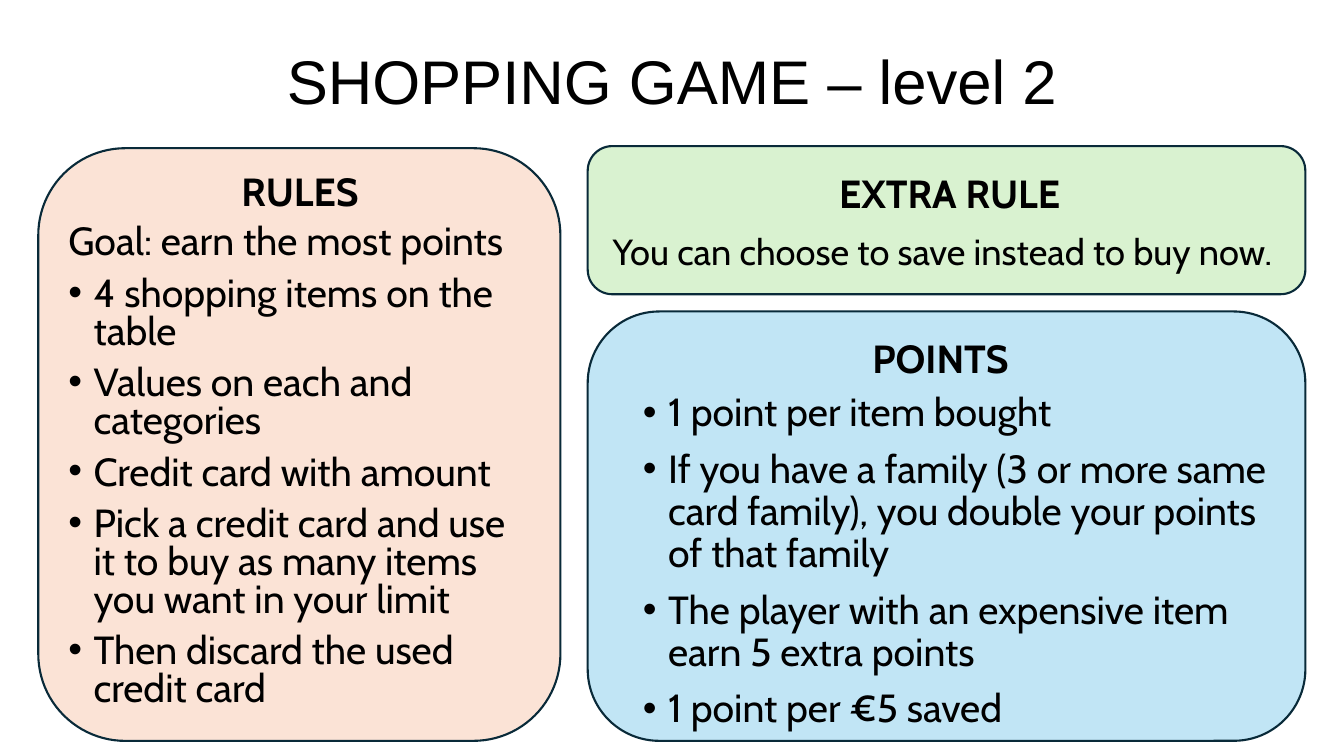
from dataclasses import dataclass

from lxml.etree import SubElement
from pptx import Presentation
from pptx.dml.color import RGBColor
from pptx.enum.shapes import MSO_SHAPE
from pptx.enum.text import MSO_ANCHOR, PP_ALIGN
from pptx.oxml.ns import qn
from pptx.util import Inches, Pt


@dataclass(frozen=True)
class Theme:
    text: str = "000000"
    outline: str = "092A39"
    rules: str = "FBE3D6"
    extra: str = "D9F2D0"
    points: str = "C1E5F5"
    title_font: str = "Arial"
    body_font: str = "Cabin"
    title_size: float = 44
    body_size: float = 28
    note_size: float = 25.9
    outline_width: float = 1.5
    paragraph_gap: float = 10
    bullet_indent: float = 0.25


class SlideBuilder:
    """Places elements on a grid of 100 columns by 100 rows."""

    def __init__(self, presentation, theme):
        self.theme = theme
        self.column = presentation.slide_width / 100
        self.row = presentation.slide_height / 100
        self.slide = presentation.slides.add_slide(presentation.slide_layouts[6])

    def place(self, area):
        left, top, width, height = area
        return (round(left * self.column), round(top * self.row),
                round(width * self.column), round(height * self.row))

    def panel(self, area, color):
        shape = self.slide.shapes.add_shape(MSO_SHAPE.ROUNDED_RECTANGLE, *self.place(area))
        shape.shadow.inherit = False
        shape.fill.solid()
        shape.fill.fore_color.rgb = RGBColor.from_string(color)
        shape.line.color.rgb = RGBColor.from_string(self.theme.outline)
        shape.line.width = Pt(self.theme.outline_width)

    def text(self, area, lines, size=None, font=None, bold=False, spacing=1.0,
             align=PP_ALIGN.LEFT, anchor=MSO_ANCHOR.TOP, bullets_from=None):
        """Adds a text box; lines from index bullets_from on get a bullet."""
        frame = self.slide.shapes.add_textbox(*self.place(area)).text_frame
        frame.word_wrap = True
        frame.vertical_anchor = anchor
        for index, line in enumerate(lines):
            paragraph = frame.paragraphs[0] if index == 0 else frame.add_paragraph()
            paragraph.text = line
            paragraph.alignment = align
            paragraph.line_spacing = spacing
            if index:
                paragraph.space_before = Pt(self.theme.paragraph_gap)
            if bullets_from is not None and index >= bullets_from:
                self.bullet(paragraph)
            paragraph.font.name = font or self.theme.body_font
            paragraph.font.size = Pt(size or self.theme.body_size)
            paragraph.font.bold = bold
            paragraph.font.color.rgb = RGBColor.from_string(self.theme.text)

    def bullet(self, paragraph):
        properties = paragraph._p.get_or_add_pPr()
        indent = Inches(self.theme.bullet_indent)
        properties.set("marL", str(indent))
        properties.set("indent", str(-indent))
        SubElement(properties, qn("a:buFont")).set("typeface", "Arial")
        SubElement(properties, qn("a:buChar")).set("char", "•")

    def title(self, area, line):
        self.text(area, [line], self.theme.title_size, self.theme.title_font,
                  spacing=0.9, align=PP_ALIGN.CENTER, anchor=MSO_ANCHOR.MIDDLE)

    def heading(self, area, line):
        self.text(area, [line], bold=True, align=PP_ALIGN.CENTER)


def main():
    presentation = Presentation()
    presentation.slide_width = Inches(13.33)
    presentation.slide_height = Inches(7.5)
    theme = Theme()
    builder = SlideBuilder(presentation, theme)

    builder.title((6.9, 5.33, 86.25, 11.73), "SHOPPING GAME – level 2")

    builder.panel((2.85, 19.6, 38.85, 78.4), theme.rules)
    builder.heading((4.35, 21.47, 35.93, 7.6), "RULES")
    builder.text((4.35, 29.2, 35.93, 68.93), [
        "Goal: earn the most points",
        "4 shopping items on the table",
        "Values on each and categories",
        "Credit card with amount",
        "Pick a credit card and use it to buy as many items you want in your limit",
        "Then discard the used credit card",
    ], spacing=0.8, bullets_from=1)

    builder.panel((43.73, 19.33, 53.4, 19.6), theme.extra)
    builder.heading((45.68, 21.73, 49.95, 7.6), "EXTRA RULE")
    builder.text((44.85, 30.27, 53.18, 7.6),
                 ["You can choose to save instead to buy now."],
                 size=theme.note_size, spacing=0.9)

    builder.panel((43.73, 41.2, 53.4, 56.8), theme.points)
    builder.heading((45.68, 43.6, 48.6, 7.6), "POINTS")
    builder.text((47.1, 51.33, 48.6, 46.67), [
        "1 point per item bought",
        "If you have a family (3 or more same card family), you double your points of that family",
        "The player with an expensive item earn 5 extra points",
        "1 point per €5 saved",
    ], spacing=0.9, bullets_from=0)

    presentation.save("out.pptx")


if __name__ == "__main__":
    main()
